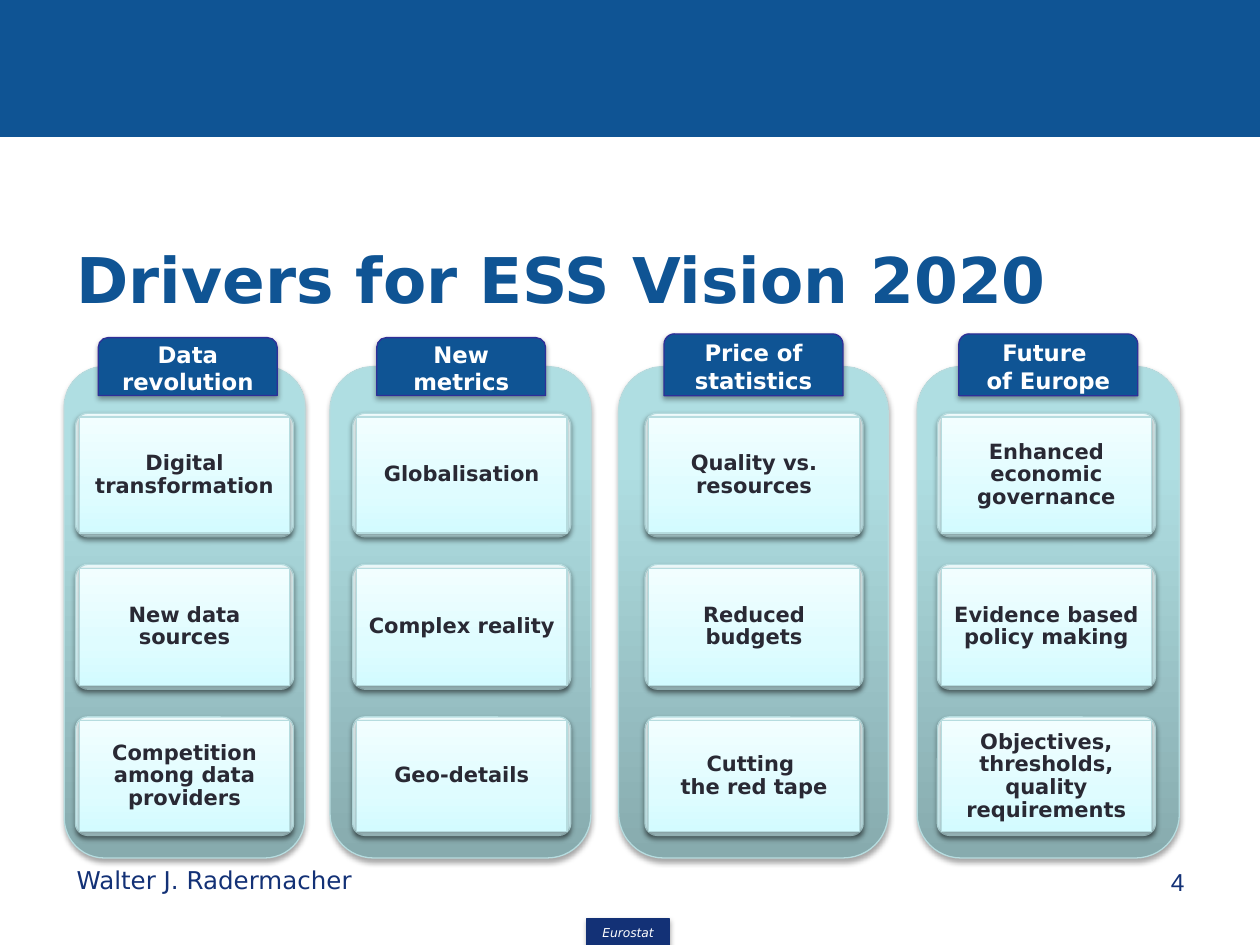
"""Build the slide on the drivers for ESS Vision 2020."""
from dataclasses import dataclass

from lxml import etree
from pptx import Presentation, util as u
from pptx.dml.color import RGBColor
from pptx.enum import shapes, text
from pptx.oxml.ns import qn

TITLE = "Drivers for ESS Vision 2020"
AUTHOR, PAGE, OFFICE = "Walter J. Radermacher", "4", "Eurostat"
PILLARS = [
    {"head": "Data revolution", "panel": (0.51, 1.91), "tab": (0.78, 2.68, 1.42), "card": 0.6,
     "drivers": ["Digital transformation", "New data sources", "Competition among data providers"]},
    {"head": "New metrics", "panel": (2.62, 2.07), "tab": (2.99, 2.68, 1.34), "card": 2.8,
     "drivers": ["Globalisation", "Complex reality", "Geo-details"]},
    {"head": "Price of statistics", "panel": (4.91, 2.14), "tab": (5.27, 2.65, 1.42), "card": 5.12,
     "drivers": ["Quality vs. resources", "Reduced budgets", "Cutting \nthe red tape"]},
    {"head": "Future \vof Europe", "panel": (7.28, 2.08), "tab": (7.61, 2.65, 1.42), "card": 7.44,
     "drivers": ["Enhanced economic governance", "Evidence based policy making",
                 "Objectives, thresholds, quality requirements"]},
]
ROWS = [(3.28, 0.98), (4.48, 0.99), (5.69, 0.94)]
PANEL_TOP, PANEL_HEIGHT, TAB_BOTTOM = 2.91, 3.9, 3.14
CARD_WIDTH, BEVEL = 1.73, 0.03


@dataclass(frozen=True)
class Theme:
    """Colours, fonts and type sizes."""
    blue: str = "0F5494"
    navy: str = "133176"
    tab_edge: str = "2F2F98"
    edge: str = "B6DCDF"
    ink: str = "292934"
    white: str = "FFFFFF"
    panel: tuple = ((0, "87ABAE"), (80, "AFDEE2"), (100, "AFE0E4"))
    card: tuple = ((0, "D3FBFF"), (35, "DFFCFF"), (100, "F2FEFF"))
    panel_shadow: tuple = (35, 3.1, 1.8)
    card_shadow: tuple = (38, 3.1, 1.6)
    font: str = "DejaVu Sans"
    page_font: str = "Arial"
    title_size: int = 36
    tab_size: int = 13
    card_size: int = 12
    footer_size: int = 14
    office_size: int = 7


T = Theme()
KIND = shapes.MSO_SHAPE
LEFT, CENTER, RIGHT = text.PP_ALIGN.LEFT, text.PP_ALIGN.CENTER, text.PP_ALIGN.RIGHT
MIDDLE, TOP = text.MSO_ANCHOR.MIDDLE, text.MSO_ANCHOR.TOP


def inches(box):
    return [u.Inches(round(length, 2)) for length in box]


def add_colour(parent, value):
    return etree.SubElement(parent, qn("a:srgbClr"), val=value)


def set_gradient(shape, stops):
    shape.fill.background()
    blank = shape._element.spPr.find(qn("a:noFill"))
    gradient = etree.Element(qn("a:gradFill"), rotWithShape="1")
    stop_list = etree.SubElement(gradient, qn("a:gsLst"))
    for share, value in stops:
        add_colour(etree.SubElement(stop_list, qn("a:gs"), pos=str(share * 1000)), value)
    etree.SubElement(gradient, qn("a:lin"), ang=str(270 * 60000), scaled="0")
    blank.getparent().replace(blank, gradient)


def set_shadow(shape, opacity, blur, distance):
    effects = shape._element.spPr.find(qn("a:effectLst"))
    shadow = etree.SubElement(effects, qn("a:outerShdw"), blurRad=str(u.Pt(blur)),
                              dist=str(u.Pt(distance)), dir=str(90 * 60000), rotWithShape="0")
    etree.SubElement(add_colour(shadow, "000000"), qn("a:alpha"), val=str(opacity * 1000))


def add_block(slide, kind, box, fill, edge, shadow=None, corner=None):
    block = slide.shapes.add_shape(kind, *inches(box))
    block.shadow.inherit = False
    if corner is not None:
        block.adjustments[0] = corner
    if isinstance(fill, str):
        block.fill.solid()
        block.fill.fore_color.rgb = RGBColor.from_string(fill)
    else:
        set_gradient(block, fill)
    block.line.color.rgb = RGBColor.from_string(edge)
    block.line.width = u.Pt(0.75)
    if shadow:
        set_shadow(block, *shadow)
    return block


def write(shape, words, size, colour, align=CENTER, anchor=MIDDLE, font=T.font,
          bold=False, italic=False, spacing=None, insets=None):
    frame = shape.text_frame
    frame.word_wrap = True
    frame.vertical_anchor = anchor
    if insets:
        frame.margin_left = frame.margin_right = u.Inches(insets[0])
        frame.margin_top = frame.margin_bottom = u.Inches(insets[1])
    for number, line in enumerate(words.split("\n")):
        paragraph = frame.add_paragraph() if number else frame.paragraphs[0]
        paragraph.alignment = align
        if spacing:
            paragraph.line_spacing = spacing
        for part, piece in enumerate(line.split("\v")):
            if part:
                paragraph.add_line_break()
            run = paragraph.add_run()
            run.text = piece
            run.font.name, run.font.size = font, u.Pt(size)
            run.font.bold, run.font.italic = bold, italic
            run.font.color.rgb = RGBColor.from_string(colour)


def add_pillar(slide, pillar):
    left, width = pillar["panel"]
    add_block(slide, KIND.ROUNDED_RECTANGLE, (left, PANEL_TOP, width, PANEL_HEIGHT),
              T.panel, T.edge, T.panel_shadow)
    left, top, width = pillar["tab"]
    tab = add_block(slide, KIND.ROUND_2_SAME_RECTANGLE, (left, top, width, TAB_BOTTOM - top),
                    T.blue, T.tab_edge, T.panel_shadow)
    write(tab, pillar["head"], T.tab_size, T.white, bold=True)
    left = pillar["card"]
    for (top, height), driver in zip(ROWS, pillar["drivers"]):
        add_block(slide, KIND.ROUNDED_RECTANGLE, (left, top, CARD_WIDTH, height),
                  T.card, T.edge, T.card_shadow, corner=0.1)
        face = (left + BEVEL, top + BEVEL, CARD_WIDTH - 2 * BEVEL, height - 2 * BEVEL)
        card = add_block(slide, KIND.RECTANGLE, face, T.card, T.edge, T.card_shadow)
        write(card, driver, T.card_size, T.ink, bold=True, spacing=0.9, insets=(0.04, 0.03))


def main():
    deck = Presentation()
    deck.slide_width, deck.slide_height = inches((10, 7.5))
    slide = deck.slides.add_slide(deck.slide_layouts[6])

    add_block(slide, KIND.RECTANGLE, (0, 0, 10, 1.08), T.blue, T.blue)
    office = add_block(slide, KIND.RECTANGLE, (4.66, 7.29, 0.65, 0.22),
                       T.navy, T.navy, T.panel_shadow)
    write(office, OFFICE, T.office_size, T.white, italic=True, insets=(0, 0))

    title = slide.shapes.add_textbox(*inches((0.51, 1.7, 9, 1.02)))
    write(title, TITLE, T.title_size, T.blue, align=LEFT, bold=True)

    for pillar in PILLARS:
        add_pillar(slide, pillar)

    author = slide.shapes.add_textbox(*inches((0.51, 6.82, 3.17, 0.53)))
    write(author, AUTHOR, T.footer_size, T.navy, align=LEFT, anchor=TOP)
    page = slide.shapes.add_textbox(*inches((7.17, 6.83, 2.33, 0.52)))
    write(page, PAGE, T.footer_size, T.navy, align=RIGHT, anchor=TOP, font=T.page_font)

    deck.save("out.pptx")


if __name__ == "__main__":
    main()
